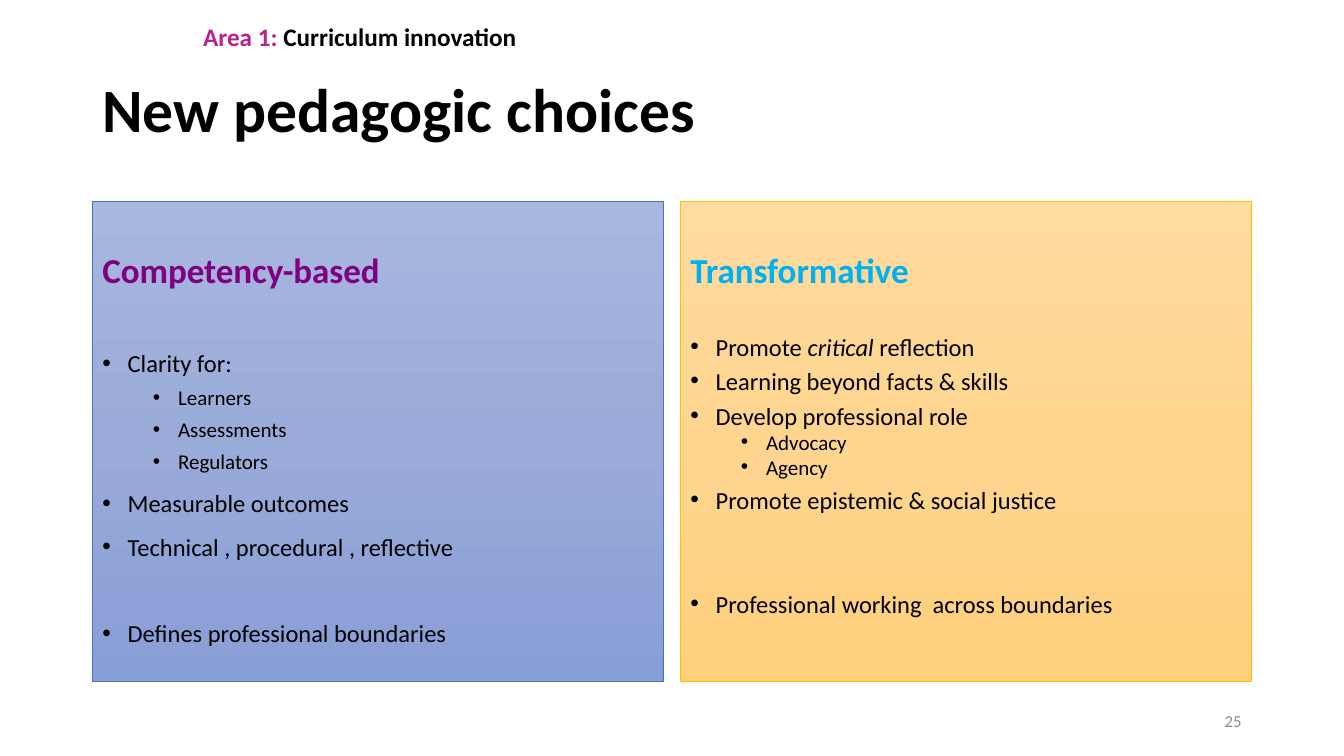
import copy
from dataclasses import dataclass

import lxml.etree
import pptx
import pptx.dml.color
import pptx.enum.text
import pptx.oxml.ns
import pptx.util

PX = 9525
COLOURS = {
    "black": "000000", "magenta": "BB1F92", "grey": "8C8C8C",
    "purple": "800080", "sky": "00B0F0", "blue_line": "4472C4", "gold_line": "FFC000",
    "blue_top": "A8B7DF", "blue_middle": "9AABD9", "blue_bottom": "889ED7",
    "gold_top": "FFDB9E", "gold_middle": "FFD590", "gold_bottom": "FFD07C",
}
ANCHOR = pptx.enum.text.MSO_ANCHOR
AUTO_SIZE = pptx.enum.text.MSO_AUTO_SIZE
ALIGN = pptx.enum.text.PP_ALIGN
INDENT = 24


@dataclass
class Span:
    text: str
    colour: str = "black"
    size: float = 17.5
    bold: bool = False
    italic: bool = False


@dataclass
class Item:
    spans: list[Span]
    level: int = 0
    before: int = 10


@dataclass
class Panel:
    placeholder: int
    left: int
    palette: str
    heading: Span
    line_spacing: float
    items: list[Item]


def point(text: str, before: int = 10) -> Item:
    return Item([Span(text)], before=before)


def detail(text: str) -> Item:
    return Item([Span(text, size=15)], level=1, before=5)


PANELS = [
    Panel(1, 88, "blue", Span("Competency-based", "purple", 25, True), 1.0, [
        point("Clarity for:", 41),
        detail("Learners"),
        detail("Assessments"),
        detail("Regulators"),
        point("Measurable outcomes"),
        point("Technical , procedural , reflective"),
        point("Defines professional boundaries", 41),
    ]),
    Panel(2, 648, "gold", Span("Transformative", "sky", 25, True), 0.7, [
        Item([Span("Promote "), Span("critical", italic=True), Span(" reflection")], before=35),
        point("Learning beyond facts & skills"),
        point("Develop professional role"),
        detail("Advocacy"),
        detail("Agency"),
        point("Promote epistemic & social justice"),
        point("Professional working  across boundaries", 60),
    ]),
]


def rgb(name: str) -> pptx.dml.color.RGBColor:
    return pptx.dml.color.RGBColor.from_string(COLOURS[name])


def apply(target, values: dict) -> None:
    for name, value in values.items():
        setattr(target, name, value)


def place(box, left: int, top: int, width: int, height: int) -> None:
    apply(box, {"left": left * PX, "top": top * PX, "width": width * PX, "height": height * PX})


def write(para, spans: list[Span]) -> None:
    for span in spans:
        run = para.add_run()
        run.text = span.text
        apply(run.font, {"name": "Calibri", "size": pptx.util.Pt(span.size),
                         "bold": span.bold, "italic": span.italic})
        run.font.color.rgb = rgb(span.colour)


def set_bullet(para, level: int, bullet: str) -> None:
    properties = para._p.get_or_add_pPr()
    properties.set("marL", str((1 + 2 * level) * INDENT * PX))
    properties.set("indent", str(-INDENT * PX))
    qn = pptx.oxml.ns.qn
    if bullet:
        lxml.etree.SubElement(properties, qn("a:buFont")).set("typeface", "Arial")
        lxml.etree.SubElement(properties, qn("a:buChar")).set("char", bullet)
    else:
        lxml.etree.SubElement(properties, qn("a:buNone"))


def paint(box, palette: str) -> None:
    box.fill.gradient()
    box.fill.gradient_angle = 270
    first_stop = box.element.spPr.find(".//" + pptx.oxml.ns.qn("a:gs"))
    first_stop.addnext(copy.deepcopy(first_stop))
    for step, (stop, part) in enumerate(zip(box.fill.gradient_stops, ("top", "middle", "bottom"))):
        stop.position = step / 2
        stop.color.rgb = rgb(f"{palette}_{part}")
    box.line.color.rgb = rgb(f"{palette}_line")
    box.line.width = pptx.util.Pt(0.5)


def draw_panel(page, panel: Panel) -> None:
    box = page.placeholders[panel.placeholder]
    place(box, panel.left, 192, 544, 457)
    paint(box, panel.palette)
    frame = box.text_frame
    apply(frame, {"word_wrap": True, "auto_size": AUTO_SIZE.NONE,
                  "vertical_anchor": ANCHOR.TOP, "margin_top": 45 * PX})
    para = frame.paragraphs[0]
    apply(para, {"space_before": pptx.util.Pt(0), "line_spacing": 1.0})
    set_bullet(para, 0, "")
    write(para, [panel.heading])
    for item in panel.items:
        para = frame.add_paragraph()
        apply(para, {"level": item.level, "line_spacing": panel.line_spacing,
                     "space_before": pptx.util.Pt(item.before)})
        set_bullet(para, item.level, "•")
        write(para, item.spans)


def draw_title(page) -> None:
    title = page.shapes.title
    place(title, 88, 38, 1104, 139)
    apply(title.text_frame, {"word_wrap": True, "auto_size": AUTO_SIZE.NONE,
                             "vertical_anchor": ANCHOR.MIDDLE})
    para = title.text_frame.paragraphs[0]
    apply(para, {"alignment": ALIGN.LEFT, "line_spacing": 0.9})
    write(para, [Span("New pedagogic choices", size=44, bold=True)])


def draw_label(page, area: tuple[int, int, int, int], spans: list[Span],
               alignment, frame_format: dict) -> None:
    box = page.shapes.add_textbox(*(length * PX for length in area))
    apply(box.text_frame, frame_format)
    para = box.text_frame.paragraphs[0]
    para.alignment = alignment
    write(para, spans)


def main() -> None:
    deck = pptx.Presentation()
    apply(deck, {"slide_width": 1280 * PX, "slide_height": 720 * PX})
    page = deck.slides.add_slide(deck.slide_layouts.get_by_name("Two Content"))
    draw_title(page)
    for panel in PANELS:
        draw_panel(page, panel)
    draw_label(page, (904, 667, 288, 38), [Span("25", "grey", 12)], ALIGN.RIGHT,
               {"word_wrap": True, "vertical_anchor": ANCHOR.MIDDLE})
    draw_label(page, (184, 16, 325, 38),
               [Span("Area 1: ", "magenta", 18, True),
                Span("Curriculum innovation", size=18, bold=True)], ALIGN.LEFT,
               {"word_wrap": False, "auto_size": AUTO_SIZE.SHAPE_TO_FIT_TEXT})
    deck.save("out.pptx")


if __name__ == "__main__":
    main()
